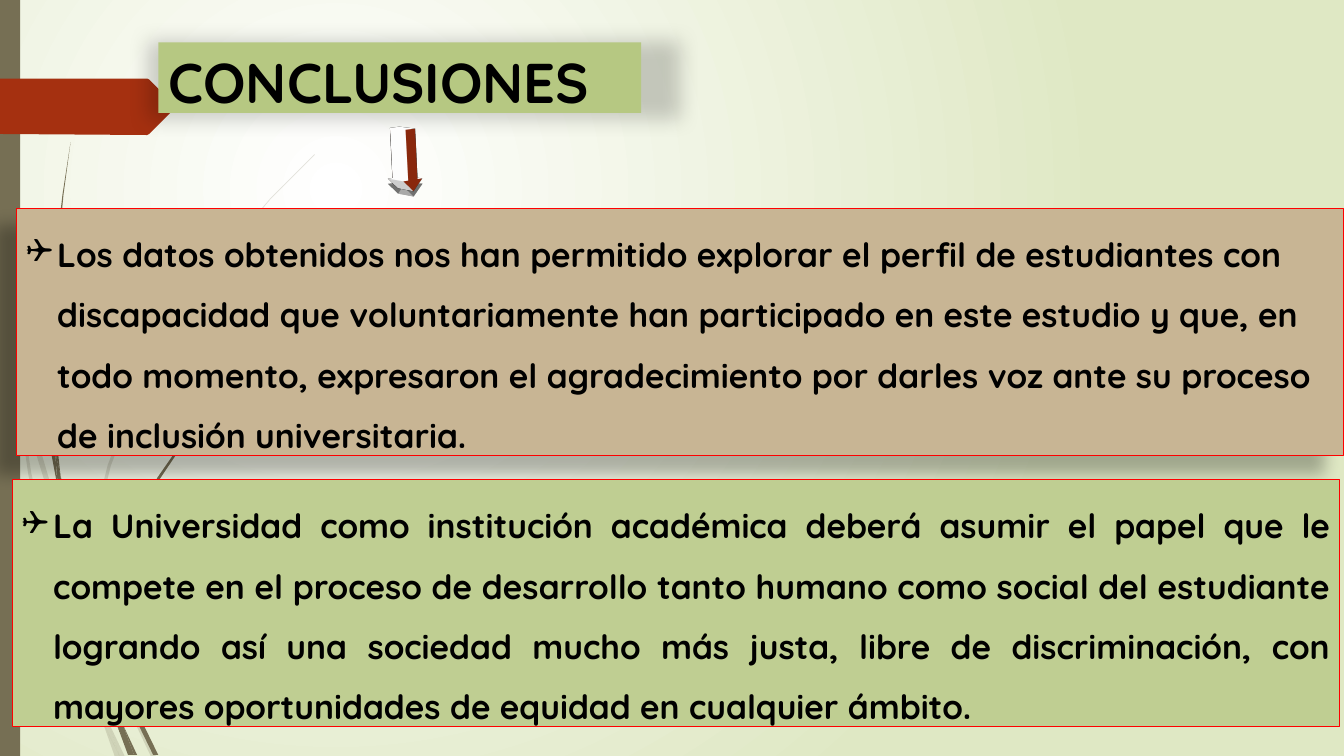
from lxml import etree
from pptx import Presentation
from pptx.dml.color import RGBColor
from pptx.enum.shapes import MSO_SHAPE as Preset
from pptx.enum.text import MSO_ANCHOR as Anchor, PP_ALIGN as Align
from pptx.oxml.ns import qn
from pptx.util import Inches, Pt

FONT = "Quicksand"
OLIVE, RUST, BLACK, RED = "766F54", "A53010", "000000", "FF0000"

FAINT_WISPS = [
    [(0.58, 5.22), (0.84, 5.99), (0.85, 5.86), (0.62, 5.2), (0.37, 4.36),
     (0.14, 3.45), (0.17, 3.76), (0.36, 4.51)],
    [(0.92, 6.07), (0.88, 5.96), (0.88, 6.1), (1.23, 6.94), (1.5, 7.51),
     (1.55, 7.51), (1.27, 6.92)],
    [(1.19, 7.51), (1.24, 7.51), (1.05, 7.11)],
    [(0.93, 6.83), (0.7, 6.19), (0.48, 5.45), (0.31, 4.69), (0.17, 3.76),
     (0.11, 3.5), (0.28, 4.7), (0.44, 5.46), (0.65, 6.21), (0.92, 6.93),
     (1.01, 7.14), (0.99, 7.07)],
    [(0.88, 5.84), (0.95, 5.22), (1.1, 4.62), (1.32, 4.04), (1.6, 3.49),
     (2.29, 2.45), (2.68, 1.98), (3.12, 1.54), (3.12, 1.53), (2.68, 1.97),
     (2.28, 2.44), (1.58, 3.48), (1.3, 4.03), (1.07, 4.61), (0.92, 5.21),
     (0.85, 5.84), (0.88, 5.96)],
    [(1.01, 7.14), (1.14, 7.51), (1.19, 7.51)],
    [(0.96, 6.92), (0.93, 6.83), (0.99, 7.07), (1.01, 7.14), (1.19, 7.51),
     (1.05, 7.11)],
]
STRONG_WISPS = [
    [(0.07, 1.1), (0.17, 2.33), (0.33, 3.55), (0.56, 4.77), (0.57, 4.81),
     (0.55, 4.53), (0.36, 3.55), (0.19, 2.32), (0.08, 1.09), (0.05, 0.48),
     (0.04, 0), (0.03, 0), (0.04, 0.48)],
    [(0.88, 5.92), (1.06, 6.45), (1.06, 6.31), (0.93, 5.9), (0.6, 4.72),
     (0.64, 5.05)],
    [(1.13, 6.49), (1.1, 6.41), (1.11, 6.56), (1.32, 7.08), (1.52, 7.49),
     (1.57, 7.49), (1.36, 7.06)],
    [(0.6, 4.72), (0.58, 4.53), (0.54, 3.49), (0.58, 2.45), (0.63, 1.93),
     (0.7, 1.41), (0.62, 1.93), (0.56, 2.45), (0.52, 3.49), (0.55, 4.49)],
    [(1.33, 7.49), (1.36, 7.49), (1.22, 7.19)],
    [(0.57, 4.77), (0.64, 5.05), (0.6, 4.72), (0.55, 4.49), (0.55, 4.53)],
    [(1.11, 6.33), (1.25, 5.52), (1.58, 4.76), (2.05, 4.06), (2.31, 3.74),
     (2.61, 3.44), (2.6, 3.44), (2.31, 3.73), (2.04, 4.05), (1.56, 4.74),
     (1.22, 5.51), (1.06, 6.31), (1.1, 6.41)],
    [(1.17, 7.22), (1.27, 7.49), (1.31, 7.49)],
    [(1.16, 7.06), (1.1, 6.91), (1.17, 7.22), (1.3, 7.49), (1.33, 7.49),
     (1.22, 7.19)],
]
RIBBON = [(0, 0.78), (1.46, 0.78), (1.48, 0.79), (1.73, 1.04), (1.74, 1.06),
          (1.73, 1.08), (1.48, 1.33), (1.46, 1.34), (0, 1.33)]

FIRST_CONCLUSION = (
    "Los datos obtenidos nos han permitido explorar el perfil de estudiantes "
    "con discapacidad que voluntariamente han participado en este estudio y "
    "que, en todo momento, expresaron el agradecimiento por darles voz ante "
    "su proceso de inclusión universitaria.")
SECOND_CONCLUSION = (
    "La Universidad como institución académica deberá asumir el papel que le "
    "compete en el proceso de desarrollo tanto humano como social del "
    "estudiante logrando así una sociedad mucho más justa, libre de "
    "discriminación, con mayores oportunidades de equidad en cualquier ámbito.")


def color(code):
    return RGBColor.from_string(code)


def add_node(parent, tag, **attributes):
    node = etree.SubElement(parent, qn(tag))
    for key, value in attributes.items():
        node.set(key, str(value))
    return node


def paint(shape, fill, line=None):
    shape.shadow.inherit = False
    shape.fill.solid()
    shape.fill.fore_color.rgb = color(fill)
    if line:
        shape.line.color.rgb = color(line)
        shape.line.width = Pt(0.75)
    else:
        shape.line.fill.background()


def cast_shadow(shape, opacity, blur, distance, angle, scale=100):
    effects = shape._element.spPr.find(qn("a:effectLst"))
    shadow = add_node(effects, "a:outerShdw", blurRad=Pt(blur), dist=Pt(distance),
                      dir=angle * 60000, sx=scale * 1000, sy=scale * 1000,
                      algn="ctr", rotWithShape=0)
    tint = add_node(shadow, "a:srgbClr", val=BLACK)
    add_node(tint, "a:alpha", val=opacity * 1000)


def write(paragraph, text, size):
    run = paragraph.add_run()
    run.text = text
    run.font.name = FONT
    run.font.size = Pt(size)
    run.font.bold = True
    run.font.color.rgb = color(BLACK)


def add_outline(slide, box, points, fill, opacity=100):
    corners = [(Inches(box[0] + x), Inches(box[1] + y)) for x, y in points]
    builder = slide.shapes.build_freeform(*corners[0])
    builder.add_line_segments(corners[1:])
    outline = builder.convert_to_shape()
    paint(outline, fill)
    if opacity < 100:
        tint = outline._element.spPr.find(qn("a:solidFill"))[0]
        add_node(tint, "a:alpha", val=opacity * 1000)


def add_backdrop(slide, box):
    wash = slide.background.fill
    wash.gradient()
    for stop, tone in zip(wash.gradient_stops, ("FFFFFF", "DFE8C4")):
        stop.color.rgb = color(tone)
    gradient = next(slide._element.iter(qn("a:gradFill")))
    gradient.remove(gradient.find(qn("a:lin")))
    center = add_node(gradient, "a:path", path="circle")
    add_node(center, "a:fillToRect", l=50000, t=50000, r=100000, b=100000)

    for wisp in FAINT_WISPS:
        add_outline(slide, box, wisp, OLIVE, 20)
    for wisp in STRONG_WISPS:
        add_outline(slide, box, wisp, OLIVE)
    left, top, _, height = box
    side_bar = slide.shapes.add_shape(
        Preset.RECTANGLE, *map(Inches, (left, top, 0.2, height)))
    paint(side_bar, OLIVE)
    add_outline(slide, box, RIBBON, RUST)


def add_heading(slide, box, text):
    heading = slide.shapes.title
    slide.shapes._spTree.append(heading._element)
    heading.left, heading.top, heading.width, heading.height = map(Inches, box)
    paint(heading, "B6C882")
    cast_shadow(heading, 18, 14.5, 19, 192, 110)
    heading.text_frame.vertical_anchor = Anchor.TOP
    paragraph = heading.text_frame.paragraphs[0]
    paragraph.alignment = Align.LEFT
    write(paragraph, text, 40)


def add_conclusion(slide, box, text, fill, alignment):
    panel = slide.shapes.add_shape(Preset.RECTANGLE, *map(Inches, box))
    paint(panel, fill, RED)
    frame = panel.text_frame
    frame.word_wrap = True
    frame.vertical_anchor = Anchor.TOP
    paragraph = frame.paragraphs[0]
    paragraph.alignment = alignment
    paragraph.line_spacing = 1.5
    write(paragraph, text, 24)
    properties = paragraph._p.get_or_add_pPr()
    properties.set("marL", str(Inches(0.31)))
    properties.set("indent", str(Inches(-0.31)))
    add_node(properties, "a:buFont", typeface="Wingdings")
    add_node(properties, "a:buChar", char="❑")
    return panel


def add_down_arrow(slide, box):
    arrow = slide.shapes.add_shape(Preset.DOWN_ARROW, *map(Inches, box))
    paint(arrow, RUST)
    cast_shadow(arrow, 33, 17.8, 4, 87)
    properties = arrow._element.spPr
    scene = add_node(properties, "a:scene3d")
    camera = add_node(scene, "a:camera", prst="perspectiveFront", fov=3300000)
    add_node(camera, "a:rot", lat=486000, lon=19530000, rev=174000)
    light = add_node(scene, "a:lightRig", rig="harsh", dir="t")
    add_node(light, "a:rot", lat=0, lon=0, rev=3000000)
    solid = add_node(properties, "a:sp3d", extrusionH=254000, contourW=19050)
    add_node(solid, "a:bevelT", w=82550, h=44450, prst="angle")
    add_node(solid, "a:bevelB", w=82550, h=44450, prst="angle")
    for part in ("a:extrusionClr", "a:contourClr"):
        add_node(add_node(solid, part), "a:srgbClr", val="FFFFFF")


def main():
    deck = Presentation()
    deck.slide_width, deck.slide_height = Inches(13.33), Inches(7.5)
    slide = deck.slides.add_slide(deck.slide_layouts[5])
    add_backdrop(slide, (0, 0, 13.33, 7.5))
    add_heading(slide, (1.57, 0.42, 4.79, 0.7), "CONCLUSIONES")
    first_panel = add_conclusion(slide, (0.16, 2.07, 13.17, 2.45),
                                 FIRST_CONCLUSION, "C8B594", Align.LEFT)
    cast_shadow(first_panel, 28, 11.8, 19.7, 141)
    add_down_arrow(slide, (3.97, 1.28, 0.23, 0.62))
    add_conclusion(slide, (0.12, 4.76, 13.17, 2.45),
                   SECOND_CONCLUSION, "BFCE92", Align.JUSTIFY)
    deck.save("out.pptx")


if __name__ == "__main__":
    main()
